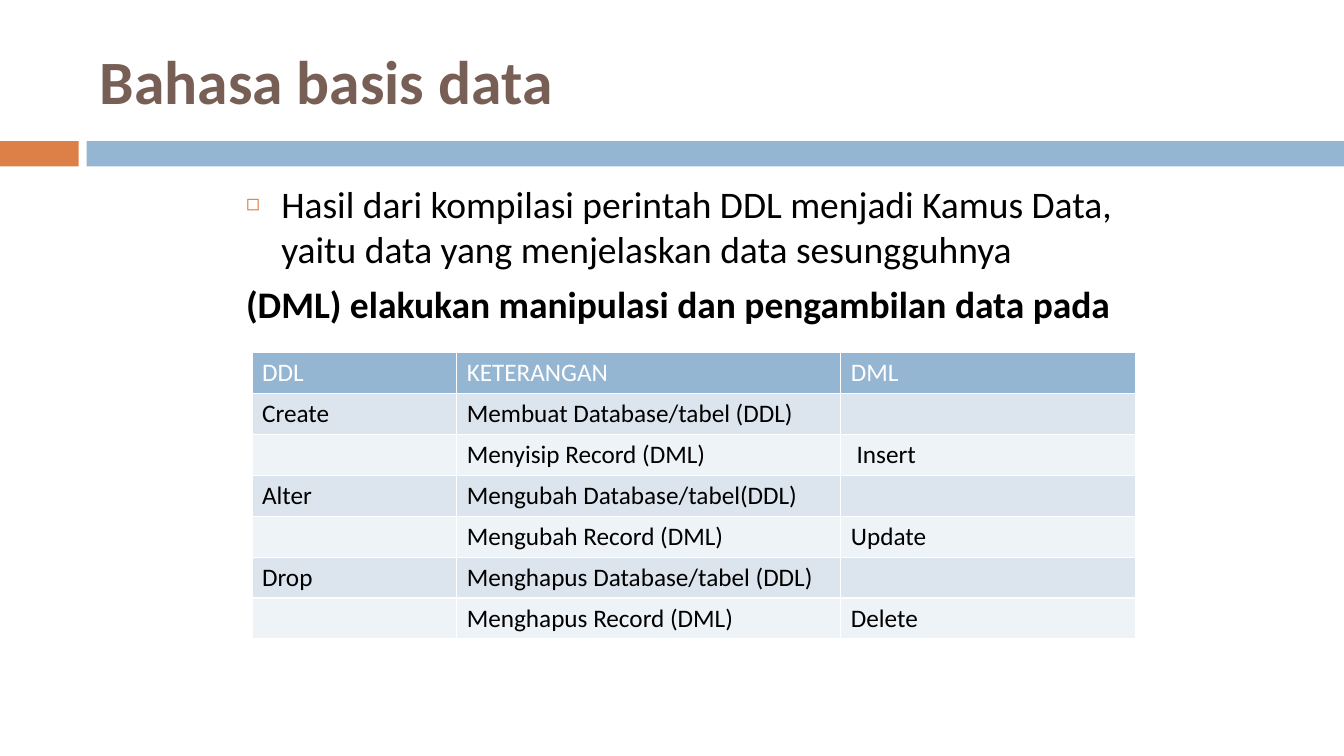
from lxml import etree
from pptx import Presentation
from pptx.dml.color import RGBColor
from pptx.enum.shapes import MSO_SHAPE
from pptx.enum.text import MSO_ANCHOR, MSO_AUTO_SIZE, PP_ALIGN
from pptx.oxml.ns import qn
from pptx.util import Inches, Pt

RECTANGLE = MSO_SHAPE.RECTANGLE
MIDDLE, TOP = MSO_ANCHOR.MIDDLE, MSO_ANCHOR.TOP
NO_FIT = MSO_AUTO_SIZE.NONE
LEFT = PP_ALIGN.LEFT

FONT = "Calibri"
WHITE, BLACK, BROWN = "FFFFFF", "000000", "775F55"
ORANGE, BLUE = "DD8047", "94B6D2"
BANDS = ["DCE5EE", "EEF3F7"]

TITLE = "Bahasa basis data"
POINTS = [
    ("Hasil dari kompilasi perintah DDL menjadi Kamus Data, "
     "yaitu data yang menjelaskan data sesungguhnya", "◻"),
    ("(DML) elakukan manipulasi dan pengambilan data pada", None),
]
COLUMN_WIDTHS = [2.03, 3.81, 2.92]
COMMANDS = [
    ["DDL", "KETERANGAN", "DML"],
    ["Create", "Membuat Database/tabel (DDL)", ""],
    ["", "Menyisip Record (DML)", " Insert"],
    ["Alter", "Mengubah Database/tabel(DDL)", ""],
    ["", "Mengubah Record (DML)", "Update"],
    ["Drop", "Menghapus Database/tabel (DDL)", ""],
    ["", "Menghapus Record (DML)", "Delete"],
]


def color(value):
    return RGBColor.from_string(value)


def style(paragraph, size, value, bold=False):
    font = paragraph.font
    font.name, font.size, font.bold = FONT, Pt(size), bold
    font.color.rgb = color(value)


def place(shape, box):
    shape.left, shape.top, shape.width, shape.height = map(Inches, box)


def add_element(parent, tag, **attributes):
    return etree.SubElement(parent, qn(tag), attributes)


def add_band(page, box):
    left, top, width, height = box
    accent, gap = 0.78, 0.08
    start = accent + gap
    for offset, length, value in [(0, accent, ORANGE), (start, width - start, BLUE)]:
        bar = page.shapes.add_shape(
            RECTANGLE, *map(Inches, (left + offset, top, length, height)))
        bar.shadow.inherit = False
        bar.fill.solid()
        bar.fill.fore_color.rgb = color(value)
        bar.line.fill.background()


def fill_title(page, box):
    title = page.shapes.title
    place(title, box)
    frame = title.text_frame
    frame.text = TITLE
    frame.auto_size = NO_FIT
    frame.vertical_anchor = MIDDLE
    paragraph = frame.paragraphs[0]
    paragraph.alignment = LEFT
    style(paragraph, 44, BROWN, bold=True)


def set_bullet(paragraph, character):
    properties = paragraph._p.get_or_add_pPr()
    properties.set("marL", str(Inches(0.35)))
    properties.set("indent", str(Inches(-0.35)))
    if character is None:
        add_element(properties, "a:buNone")
        return
    bullet_color = add_element(properties, "a:buClr")
    add_element(bullet_color, "a:srgbClr", val=ORANGE)
    add_element(properties, "a:buSzPct", val="60000")
    add_element(properties, "a:buChar", char=character)


def fill_body(page, box):
    body = page.placeholders[1]
    place(body, box)
    frame = body.text_frame
    frame.text = "\n".join(text for text, _ in POINTS)
    frame.auto_size = NO_FIT
    frame.vertical_anchor = TOP
    for paragraph, (_, bullet) in zip(frame.paragraphs, POINTS):
        paragraph.space_before = Pt(7)
        set_bullet(paragraph, bullet)
        style(paragraph, 26.8, BLACK, bold=bullet is None)


def set_borders(cell):
    properties = cell._tc.get_or_add_tcPr()
    for position, side in enumerate(("L", "R", "T", "B")):
        line = etree.Element(qn(f"a:ln{side}"), w=str(Pt(1)))
        fill = add_element(line, "a:solidFill")
        add_element(fill, "a:srgbClr", val=WHITE)
        properties.insert(position, line)


def add_commands(page, box):
    frame = page.shapes.add_table(
        len(COMMANDS), len(COLUMN_WIDTHS), *map(Inches, box))
    table = frame.table
    for column, width in zip(table.columns, COLUMN_WIDTHS):
        column.width = Inches(width)
    for row, texts in enumerate(COMMANDS):
        background = BANDS[(row - 1) % 2] if row else BLUE
        for column, text in enumerate(texts):
            cell = table.cell(row, column)
            cell.text = text
            cell.fill.solid()
            cell.fill.fore_color.rgb = color(background)
            set_borders(cell)
            style(cell.text_frame.paragraphs[0], 18, BLACK if row else WHITE)


def main():
    deck = Presentation()
    deck.slide_width, deck.slide_height = Inches(13.33), Inches(7.5)
    page = deck.slides.add_slide(deck.slide_layouts[1])
    add_band(page, (0, 1.4, 13.33, 0.25))
    fill_title(page, (0.89, 0.25, 11.89, 1.08))
    fill_body(page, (2.34, 1.75, 8.92, 1.67))
    add_commands(page, (2.5, 3.5, sum(COLUMN_WIDTHS), 2.83))
    deck.save("out.pptx")


if __name__ == "__main__":
    main()
